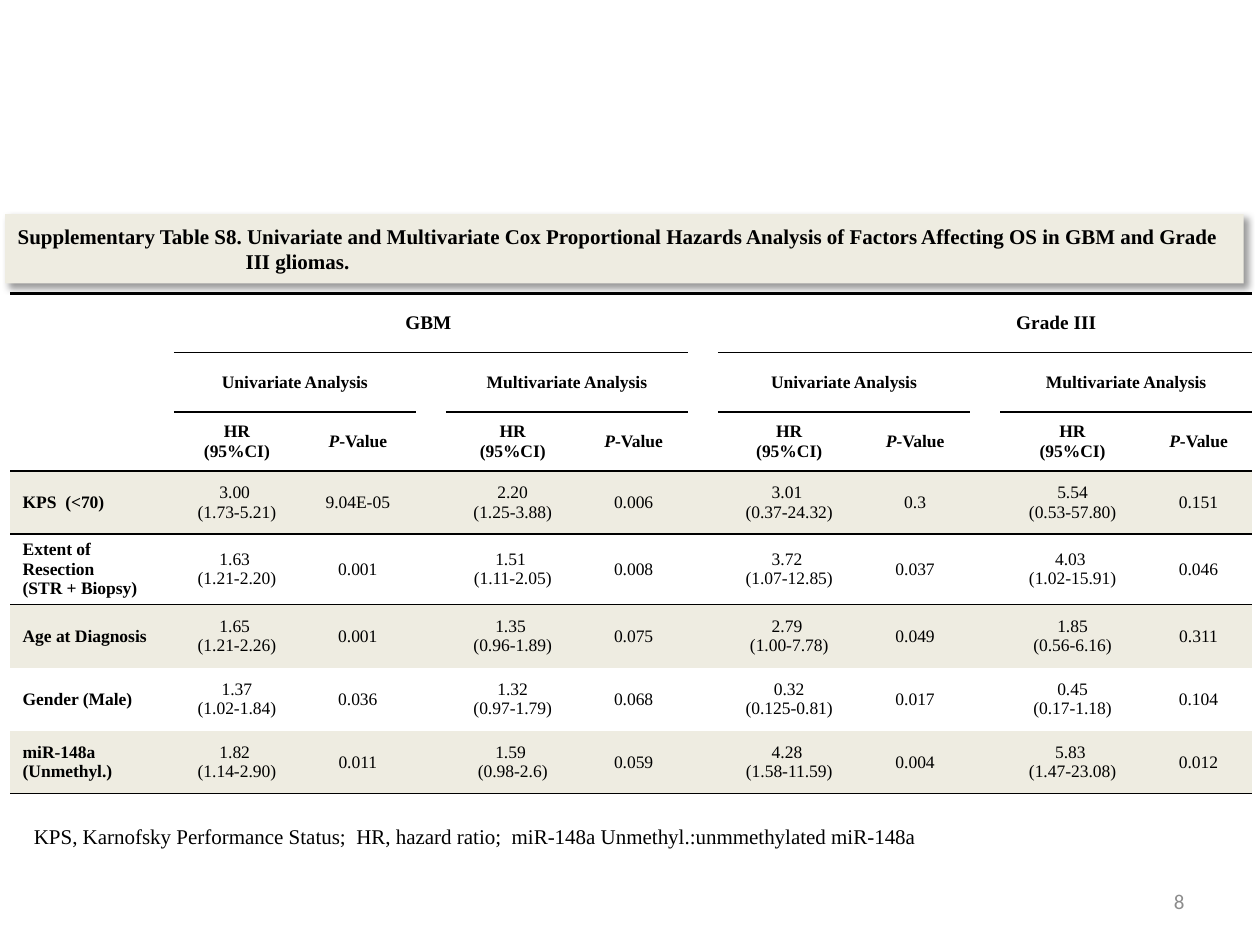
from lxml import etree
from pptx import Presentation
from pptx.dml.color import RGBColor
from pptx.enum.text import MSO_ANCHOR as Anchor, MSO_AUTO_SIZE as AutoSize, PP_ALIGN as Align
from pptx.oxml import parse_xml
from pptx.oxml.ns import nsdecls, qn
from pptx.util import Inches, Pt

SERIF = "Times New Roman"
INK = "000000"
BAND = "EEECE1"
NO_GRID_STYLE = "{2D5ABB26-0587-4C30-8999-92F81FD0307C}"

COLUMN_WIDTHS = [1.3, 1, 0.92, 0.23, 1.06, 0.86, 0.23, 1.13, 0.87, 0.23, 1.15, 0.85]
ROW_HEIGHTS = [0.47, 0.47, 0.47, 0.5, 0.56, 0.5, 0.5, 0.5]
HEADER_ROWS = 3
PAIR_COLUMNS = [1, 4, 7, 10]
MERGES = [
    (0, 0, 2, 0), (0, 1, 0, 5), (0, 6, 2, 6), (0, 8, 0, 11),
    (1, 1, 1, 2), (1, 3, 2, 3), (1, 4, 1, 5),
    (1, 7, 1, 8), (1, 9, 2, 9), (1, 10, 1, 11),
]
RULES = [
    (0, range(12), 1.5),
    (1, [*range(1, 6), *range(7, 12)], 1),
    (2, [1, 2, 4, 5, 7, 8, 10, 11], 1),
    (3, range(12), 1),
    (4, range(12), 1),
    (8, range(12), 1),
]
GROUPS = {1: "GBM ", 8: "Grade III"}
ANALYSES = ["Univariate Analysis", "Multivariate Analysis"] * 2
P_LABELS = ["P|-Value", "P|-Value", "P-|Value", "P|-Value"]
FACTORS = [
    ("KPS  (<70)", [("3.00 \n(1.73-5.21)", "9.04E-05"), ("2.20\n(1.25-3.88)", "0.006"),
                    ("3.01 \n(0.37-24.32)", "0.3"), ("5.54\n(0.53-57.80)", "0.151")]),
    ("Extent of Resection\n(STR + Biopsy)",
     [("1.63 \n(1.21-2.20)", "0.001"), ("1.51 \n(1.11-2.05)", "0.008"),
      ("3.72 \n(1.07-12.85)", "0.037"), ("4.03 \n(1.02-15.91)", "0.046")]),
    ("Age at Diagnosis", [("1.65 \n(1.21-2.26)", "0.001"), ("1.35 \n(0.96-1.89)", "0.075"),
                          ("2.79 \n(1.00-7.78)", "0.049"), ("1.85\n(0.56-6.16)", "0.311")]),
    ("Gender (Male)", [("1.37\n(1.02-1.84)", "0.036"), ("1.32\n(0.97-1.79)", "0.068"),
                       ("0.32\n(0.125-0.81)", "0.017"), ("0.45\n(0.17-1.18)", "0.104")]),
    ("miR-148a (Unmethyl.)", [("1.82 \n(1.14-2.90)", "0.011"), ("1.59 \n(0.98-2.6)", "0.059"),
                              ("4.28 \n(1.58-11.59)", "0.004"), ("5.83 \n(1.47-23.08)", "0.012")]),
]


def color(value):
    return RGBColor.from_string(value)


def format_font(font, ink=INK, **values):
    for name, value in values.items():
        setattr(font, name, value)
    font.color.rgb = color(ink)


def write(frame, text, align=Align.LEFT, **style):
    for index, line in enumerate(text.split("\n")):
        para = frame.paragraphs[0] if index == 0 else frame.add_paragraph()
        para.alignment = align
        italic, bar, plain = line.rpartition("|")
        for part, slanted in ((italic, True), (plain, False)):
            if part:
                span = para.add_run()
                span.text = part
                format_font(span.font, italic=slanted, **style)


def add_shadow(shape):
    shape._element.spPr.append(parse_xml(
        f'<a:effectLst {nsdecls("a")}><a:outerShdw blurRad="{Pt(4)}" dist="{Pt(3)}" '
        f'dir="2700000" algn="tl" rotWithShape="0"><a:srgbClr val="{INK}">'
        '<a:alpha val="40000"/></a:srgbClr></a:outerShdw></a:effectLst>'))


def add_heading(page, box):
    title = page.shapes.title
    title.left, title.top, title.width, title.height = map(Inches, box)
    title.fill.solid()
    title.fill.fore_color.rgb = color(BAND)
    title.line.fill.background()
    add_shadow(title)
    frame = title.text_frame
    frame.word_wrap = True
    frame.auto_size = AutoSize.NONE
    frame.vertical_anchor = Anchor.MIDDLE
    write(frame, "Supplementary Table S8. Univariate and Multivariate Cox Proportional Hazards "
          "Analysis of Factors Affecting OS in GBM and Grade III gliomas.",
          name=SERIF, size=Pt(12), bold=True)
    properties = frame.paragraphs[0]._p.get_or_add_pPr()
    properties.set("marL", str(Inches(1.81)))
    properties.set("indent", str(Inches(-1.81)))


def add_border(cell, edge, points):
    properties = cell._tc.get_or_add_tcPr()
    line = parse_xml(
        f'<a:{edge} {nsdecls("a")} w="{Pt(points)}"><a:solidFill><a:srgbClr val="{INK}"/>'
        f'</a:solidFill></a:{edge}>')
    position = 1 if edge == "lnB" and properties.find(qn("a:lnT")) is not None else 0
    properties.insert(position, line)


def draw_rules(table):
    for boundary, columns, points in RULES:
        for column in columns:
            if boundary < len(ROW_HEIGHTS):
                add_border(table.cell(boundary, column), "lnT", points)
            if boundary > 0:
                add_border(table.cell(boundary - 1, column), "lnB", points)


def fill_header(table):
    bold = dict(align=Align.CENTER, name=SERIF, bold=True)
    for column, group in GROUPS.items():
        write(table.cell(0, column).text_frame, group, size=Pt(11), **bold)
    for column, analysis, p_label in zip(PAIR_COLUMNS, ANALYSES, P_LABELS):
        for row, offset, text in ((1, 0, analysis), (2, 0, "HR\n(95%CI)"), (2, 1, p_label)):
            write(table.cell(row, column + offset).text_frame, text, size=Pt(10), **bold)


def fill_factors(table):
    style = dict(name=SERIF, size=Pt(10))
    for row, (factor, results) in enumerate(FACTORS, HEADER_ROWS):
        write(table.cell(row, 0).text_frame, factor, bold=True, **style)
        for column, pair in zip(PAIR_COLUMNS, results):
            for offset, text in enumerate(pair):
                write(table.cell(row, column + offset).text_frame, text,
                      align=Align.CENTER, bold=False, **style)


def add_results(page, box):
    table = page.shapes.add_table(
        len(ROW_HEIGHTS), len(COLUMN_WIDTHS), *map(Inches, box)).table
    table.first_row = table.horz_banding = False
    table._tbl.tblPr.find(qn("a:tableStyleId")).text = NO_GRID_STYLE
    for column, width in zip(table.columns, COLUMN_WIDTHS):
        column.width = Inches(width)
    for row, height in zip(table.rows, ROW_HEIGHTS):
        row.height = Inches(height)
    for index, row in enumerate(table.rows):
        for cell in row.cells:
            cell.vertical_anchor = Anchor.MIDDLE
            if index >= HEADER_ROWS and (index - HEADER_ROWS) % 2 == 0:
                cell.fill.solid()
                cell.fill.fore_color.rgb = color(BAND)
            else:
                cell.fill.background()
    for top, left, bottom, right in MERGES:
        table.cell(top, left).merge(table.cell(bottom, right))
    fill_header(table)
    fill_factors(table)
    draw_rules(table)


def add_text(page, box, text, anchor=Anchor.TOP, **style):
    frame = page.shapes.add_textbox(*map(Inches, box)).text_frame
    frame.word_wrap = True
    frame.vertical_anchor = anchor
    write(frame, text, size=Pt(12), **style)


def main():
    deck = Presentation()
    deck.slide_width, deck.slide_height = Inches(10), Inches(7.5)
    page = deck.slides.add_slide(deck.slide_layouts.get_by_name("Title Only"))
    add_results(page, (0.08, 2.33, 9.83, 3.97))
    add_heading(page, (0.04, 1.7, 9.83, 0.55))
    add_text(page, (0.17, 6.49, 9.71, 0.3),
             "KPS, Karnofsky Performance Status;  HR, hazard ratio;  "
             "miR-148a Unmethyl.:unmmethylated miR-148a", name=SERIF)
    add_text(page, (7.17, 6.95, 2.33, 0.4), "8", anchor=Anchor.MIDDLE,
             align=Align.RIGHT, name="Calibri", ink="8C8C8C")
    deck.save("out.pptx")


if __name__ == "__main__":
    main()
